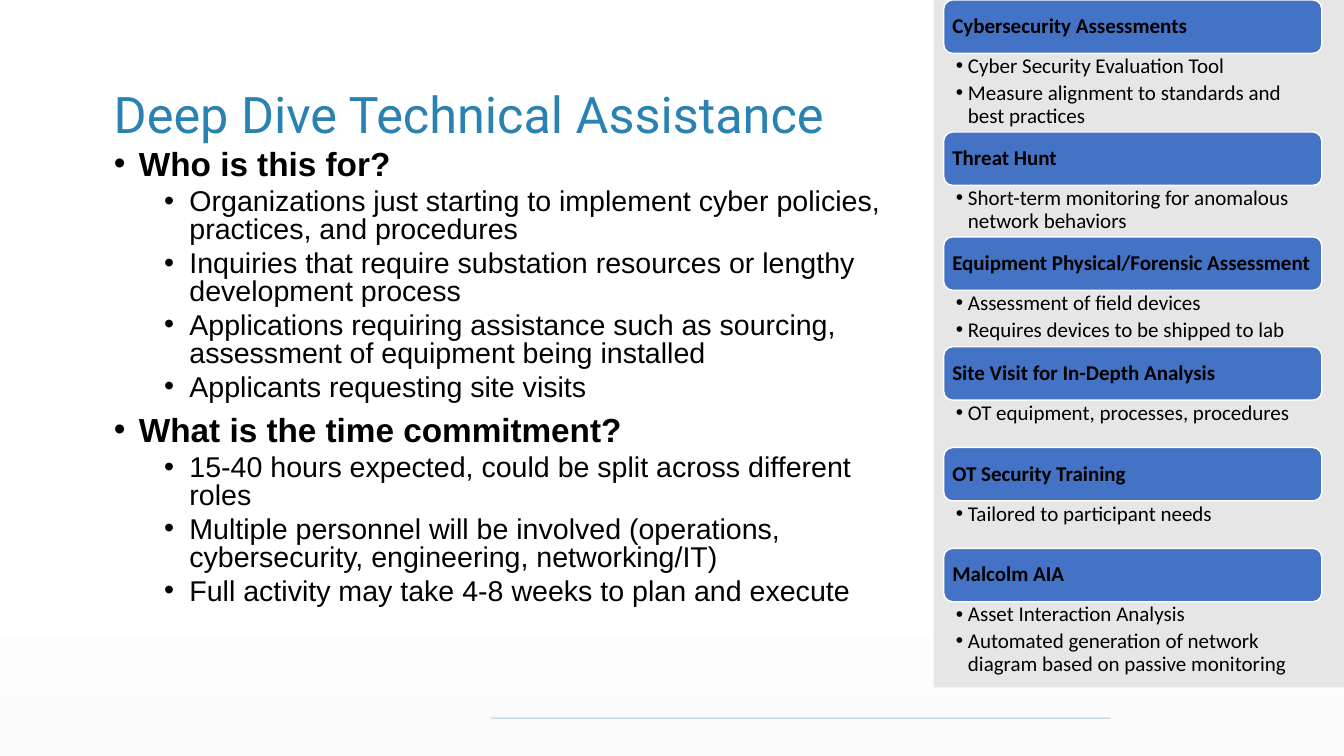
from dataclasses import dataclass
from lxml.etree import SubElement
from pptx import Presentation
from pptx.dml.color import RGBColor as Color
from pptx.enum.shapes import MSO_CONNECTOR as Connector, MSO_SHAPE as Shape
from pptx.enum.text import MSO_ANCHOR as Anchor, PP_ALIGN as Align
from pptx.oxml.ns import qn
from pptx.util import Inches, Pt


@dataclass(frozen=True)
class Theme:
    """Colours, fonts and type sizes of the slide."""
    title: str = "2982B1"
    text: str = "000000"
    white: str = "FFFFFF"
    haze: str = "FAFAFB"
    panel: str = "E7E6E6"
    bar: str = "4472C4"
    title_font: str = "Roboto"
    body_font: str = "Arial"
    card_font: str = "Calibri"
    title_size: float = 36
    question_size: float = 23.8
    answer_size: float = 20.4
    card_size: float = 15


THEME = Theme()
WIDTH, HEIGHT = 13.33, 7.5
BAR_HEIGHT = 0.53

QUESTIONS = [
    ("Who is this for?", [
        "Organizations just starting to implement cyber policies, practices, and procedures",
        "Inquiries that require substation resources or lengthy development process",
        "Applications requiring assistance such as sourcing, assessment of equipment being installed",
        "Applicants requesting site visits"]),
    ("What is the time commitment?", [
        "15-40 hours expected, could be split across different roles",
        "Multiple personnel will be involved (operations, cybersecurity, engineering, networking/IT)",
        "Full activity may take 4-8 weeks to plan and execute"]),
]

SERVICES = [
    ("Cybersecurity Assessments", 0.78, [
        "Cyber Security Evaluation Tool",
        "Measure alignment to standards and best practices"]),
    ("Threat Hunt", 0.51, ["Short-term monitoring for anomalous network behaviors"]),
    ("Equipment Physical/Forensic Assessment", 0.56, [
        "Assessment of field devices",
        "Requires devices to be shipped to lab"]),
    ("Site Visit for In-Depth Analysis", 0.47, ["OT equipment, processes, procedures"]),
    ("OT Security Training", 0.47, ["Tailored to participant needs"]),
    ("Malcolm AIA", 0.78, [
        "Asset Interaction Analysis",
        "Automated generation of network diagram based on passive monitoring"]),
]


def add_block(slide, box, color, shape=Shape.RECTANGLE):
    """Add a flat filled shape without outline."""
    block = slide.shapes.add_shape(shape, *map(Inches, box))
    block.shadow.inherit = False
    block.fill.solid()
    block.fill.fore_color.rgb = Color.from_string(color)
    block.line.fill.background()
    return block


def prepare_frame(shape, insets=(0.1, 0.05, 0.1, 0.05), anchor=Anchor.TOP):
    """Set wrapping, insets and anchor, and return the text frame."""
    frame = shape.text_frame
    frame.word_wrap = True
    frame.vertical_anchor = anchor
    frame.margin_left, frame.margin_top, frame.margin_right, frame.margin_bottom = map(Inches, insets)
    return frame


def add_para(frame, text, font, size, color=THEME.text, bold=False, spacing=0.9,
             before=0, after=0, indent=None, hanging=0.25, level=0):
    """Write one paragraph, bulleted when an indent is given."""
    first = not frame.paragraphs[0].runs
    para = frame.paragraphs[0] if first else frame.add_paragraph()
    para.level = level
    para.alignment = Align.LEFT
    para.line_spacing = spacing
    para.space_before = Pt(0 if first else before)
    para.space_after = Pt(after)
    if indent is not None:
        props = para._p.get_or_add_pPr()
        props.set("marL", str(Inches(indent)))
        props.set("indent", str(-Inches(hanging)))
        SubElement(props, qn("a:buFont")).set("typeface", "Arial")
        SubElement(props, qn("a:buChar")).set("char", "•")
    span = para.add_run()
    span.text = text
    span.font.name = font
    span.font.size = Pt(size)
    span.font.bold = bold
    span.font.color.rgb = Color.from_string(color)


def draw_backdrop(slide, box):
    """Draw the soft haze and the footer rule at the foot of the box."""
    left, top, width, height = box
    haze = add_block(slide, (left, top + height * 0.765, width, height * 0.235), THEME.white)
    haze.fill.gradient()
    haze.fill.gradient_angle = 90
    for stop, color in zip(haze.fill.gradient_stops, (THEME.haze, THEME.white)):
        stop.color.rgb = Color.from_string(color)
    rule_y = Inches(top + height * 0.95)
    rule = slide.shapes.add_connector(
        Connector.STRAIGHT, Inches(left + 4.87), rule_y, Inches(left + 11.01), rule_y)
    rule.line.width = Pt(0.75)
    rule.line.color.rgb = Color.from_string(THEME.title)
    tint = rule._element.spPr.find(".//" + qn("a:srgbClr"))
    SubElement(tint, qn("a:alpha")).set("val", "40000")
    SubElement(rule._element.spPr, qn("a:effectLst"))


def draw_title(slide, box, text):
    """Write the slide title in the middle of the box."""
    frame = prepare_frame(slide.shapes.add_textbox(*map(Inches, box)), anchor=Anchor.MIDDLE)
    add_para(frame, text, THEME.title_font, THEME.title_size, THEME.title)


def draw_questions(slide, box, questions):
    """Write each question in bold with its answers below."""
    frame = prepare_frame(slide.shapes.add_textbox(*map(Inches, box)))
    for question, answers in questions:
        add_para(frame, question, THEME.body_font, THEME.question_size, bold=True,
                 spacing=0.8, before=10, indent=0.25)
        for answer in answers:
            add_para(frame, answer, THEME.body_font, THEME.answer_size,
                     spacing=0.8, before=5, indent=0.75, level=1)


def draw_services(slide, box, services):
    """Stack the service bars and their details on the side panel."""
    left, top, width, height = box
    add_block(slide, box, THEME.panel)
    left, width = left + 0.1, width - 0.33
    for name, detail_height, details in services:
        bar = add_block(slide, (left, top, width, BAR_HEIGHT), THEME.bar, Shape.ROUNDED_RECTANGLE)
        bar.line.color.rgb = Color.from_string(THEME.white)
        bar.line.width = Pt(1)
        frame = prepare_frame(bar, (0.06, 0.06, 0.04, 0.06), Anchor.MIDDLE)
        add_para(frame, name, THEME.card_font, THEME.card_size, bold=True)
        top += BAR_HEIGHT
        notes = slide.shapes.add_textbox(*map(Inches, (left, top, width, detail_height)))
        frame = prepare_frame(notes, (0.12, 0.02, 0.12, 0.02))
        for detail in details:
            add_para(frame, detail, THEME.card_font, THEME.card_size,
                     after=3, indent=0.12, hanging=0.12, level=1)
        top += detail_height


def main():
    """Build the slide and save the deck."""
    deck = Presentation()
    deck.slide_width, deck.slide_height = Inches(WIDTH), Inches(HEIGHT)
    page = deck.slides.add_slide(deck.slide_layouts[6])
    draw_backdrop(page, (0, 0, WIDTH, HEIGHT))
    draw_services(page, (9.26, 0, 4.08, 6.82), SERVICES)
    draw_questions(page, (1.03, 1.45, 8.01, 4.6), QUESTIONS)
    draw_title(page, (1.03, 0.61, 7.33, 1.1), "Deep Dive Technical Assistance")
    deck.save("out.pptx")


if __name__ == "__main__":
    main()
